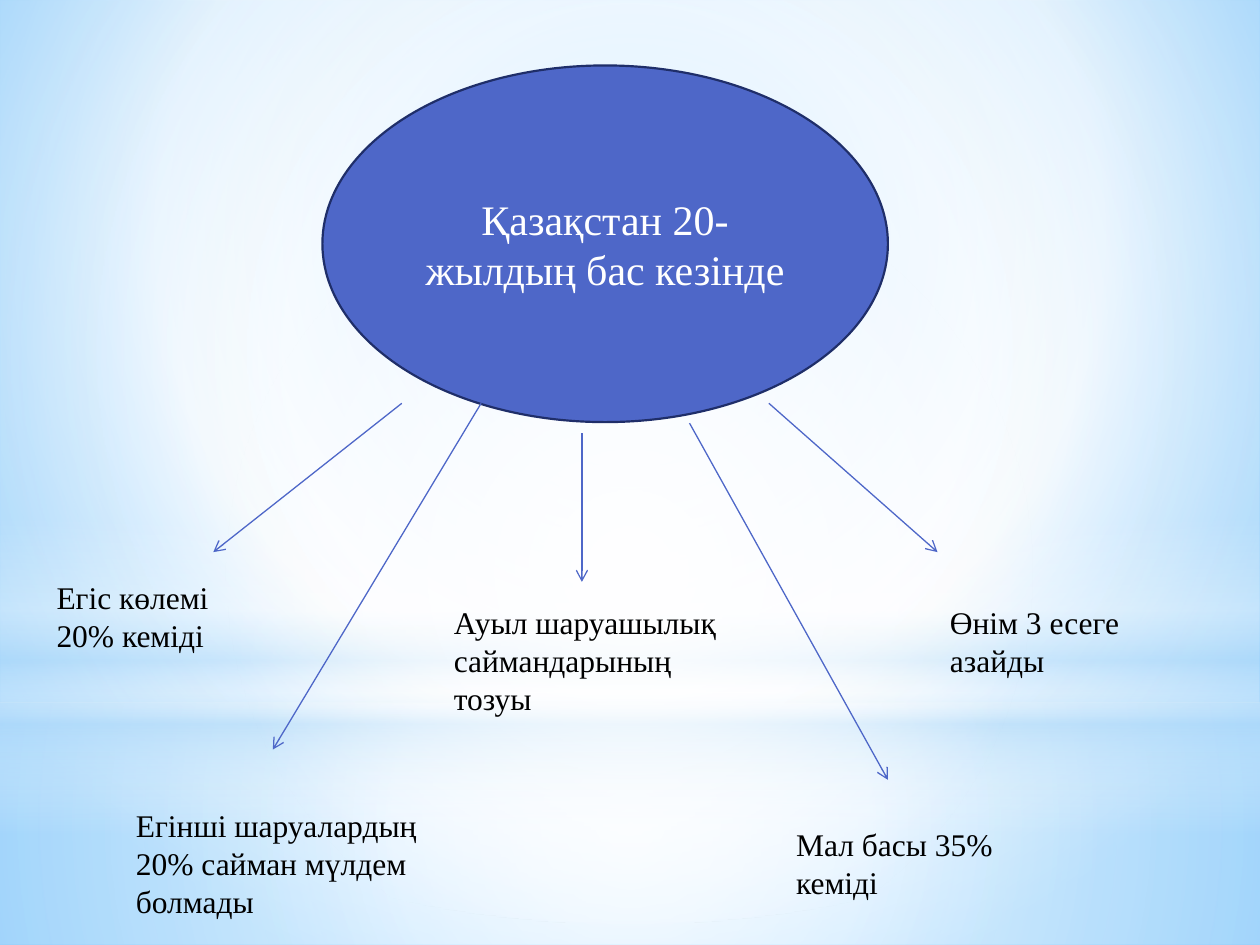
from lxml.etree import SubElement as Sub
from pptx import Presentation
from pptx.dml.color import RGBColor as RGB
from pptx.enum.shapes import MSO_CONNECTOR as Link, MSO_SHAPE as Kind
from pptx.enum.text import MSO_ANCHOR as Anchor, MSO_AUTO_SIZE as Auto, PP_ALIGN as Align
from pptx.oxml.ns import qn
from pptx.util import Cm, Pt

HUES = {
    "blue": "4E67C8", "navy": "1F2E69", "white": "FFFFFF", "black": "000000",
    "pale": "B4DCFA", "sky": "9ED5FF", "deep": "5BB9FF",
}
WIDE, HIGH = 25.4, 19.05
MID = (50, 50, 50, 50)


class Board:
    """Holds the style and the current slide."""
    font = "Times New Roman"

    def __init__(self, deck):
        self.slide = deck.slides.add_slide(deck.slide_layouts[6])

    def hue(self, name):
        return RGB.from_string(HUES[name])

    def blend(self, fill, root, stops, focus=None):
        """Gradient of (place, colour, opacity); round if a focus is given."""
        fill.gradient()
        grad = root.find(".//" + qn("a:gradFill"))
        for part in list(grad):
            grad.remove(part)
        items = Sub(grad, qn("a:gsLst"))
        for place, name, alpha in stops:
            stop = Sub(items, qn("a:gs"), pos=str(place * 1000))
            tint = Sub(stop, qn("a:srgbClr"), val=HUES[name])
            if alpha < 100:
                Sub(tint, qn("a:alpha"), val=str(alpha * 1000))
        if focus:
            way = Sub(grad, qn("a:path"), path="circle")
            sides = {k: str(v * 1000) for k, v in zip("ltrb", focus)}
            Sub(way, qn("a:fillToRect"), **sides)
        else:
            Sub(grad, qn("a:lin"), ang=str(90 * 60000), scaled="0")

    def back(self, stops, focus):
        self.blend(self.slide.background.fill, self.slide.element, stops, focus)

    def shape(self, kind, box):
        item = self.slide.shapes.add_shape(kind, *map(Cm, box))
        item.shadow.inherit = False
        return item

    def glow(self, kind, top, high, stops, focus=None):
        item = self.shape(kind, (0, top, WIDE, high))
        item.line.fill.background()
        self.blend(item.fill, item.element, stops, focus)

    def put(self, frame, text, size, name, align=Align.LEFT):
        frame.word_wrap = True
        para = frame.paragraphs[0]
        para.text, para.alignment = text, align
        para.font.name, para.font.size = self.font, Pt(size)
        para.font.color.rgb = self.hue(name)

    def oval(self, box, text):
        item = self.shape(Kind.OVAL, box)
        item.fill.solid()
        item.fill.fore_color.rgb = self.hue("blue")
        item.line.color.rgb = self.hue("navy")
        item.line.width = Pt(1.25)
        item.text_frame.vertical_anchor = Anchor.MIDDLE
        self.put(item.text_frame, text, 24, "white", Align.CENTER)

    def label(self, box, text):
        frame = self.slide.shapes.add_textbox(*map(Cm, box)).text_frame
        self.put(frame, text, 18, "black")
        frame.auto_size = Auto.SHAPE_TO_FIT_TEXT

    def arrow(self, ends):
        item = self.slide.shapes.add_connector(Link.STRAIGHT, *map(Cm, ends))
        item.line.color.rgb = self.hue("blue")
        item.line.width = Pt(0.75)
        props = item.element.spPr
        Sub(props.find(qn("a:ln")), qn("a:tailEnd"), type="arrow")
        Sub(props, qn("a:effectLst"))


def main():
    deck = Presentation()
    deck.slide_width, deck.slide_height = Cm(WIDE), Cm(HIGH)
    board = Board(deck)

    # Sky, horizon and soft light
    board.back([(0, "sky", 100), (60, "white", 100), (100, "deep", 100)],
               (20, 10, 20, 60))
    board.glow(Kind.RECTANGLE, 14.17, 4.88,
               [(0, "white", 91), (37, "white", 76), (100, "pale", 79)], MID)
    board.glow(Kind.RECTANGLE, 0, 14.17,
               [(0, "white", 89), (48, "white", 62), (100, "pale", 79)], MID)
    board.glow(Kind.RECTANGLE, 10.46, 6.35,
               [(0, "white", 0), (29, "white", 30), (45, "pale", 40),
                (55, "white", 26), (65, "pale", 60), (100, "white", 0)])
    board.glow(Kind.OVAL, 4.45, 14.17,
               [(0, "white", 100), (56, "white", 0)], MID)

    # Topic
    board.oval((6.5, 1.32, 11.4, 7.19), "Қазақстан 20-жылдың бас кезінде")

    # Outcomes: arrow ends, text box, text
    for ends, box, text in [
        ((8.1, 8.13, 4.3, 11.13), (0.89, 11.53, 4.6, 1.8),
         "Егіс көлемі 20% кеміді"),
        ((9.7, 8.13, 5.5, 15.11), (2.49, 16.13, 6.8, 2.57),
         "Егінші шаруалардың 20% сайман мүлдем болмады"),
        ((11.73, 8.73, 11.73, 11.73), (8.9, 12.04, 6.6, 2.57),
         "Ауыл шаруашылық саймандарының тозуы"),
        ((13.9, 8.53, 17.9, 15.72), (15.8, 16.51, 6.2, 1.8),
         "Мал басы 35% кеміді"),
        ((15.5, 8.13, 18.9, 11.13), (18.9, 12.04, 4.2, 1.8),
         "Өнім 3 есеге азайды"),
    ]:
        board.arrow(ends)
        board.label(box, text)

    deck.save("out.pptx")


if __name__ == "__main__":
    main()
